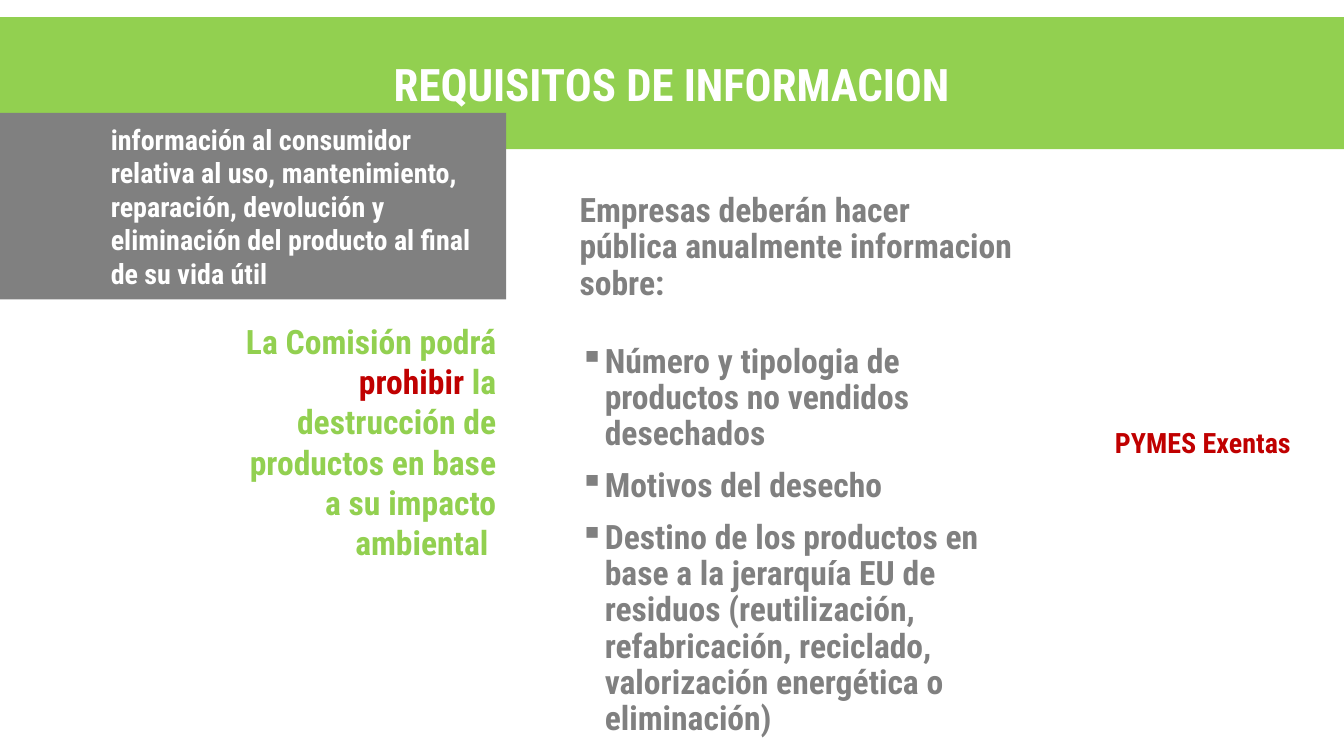
from lxml.etree import SubElement
from pptx import Presentation
from pptx.dml.color import RGBColor
from pptx.enum.text import MSO_ANCHOR, MSO_AUTO_SIZE, PP_ALIGN
from pptx.oxml.ns import qn
from pptx.util import Inches, Pt

COLORS = {"green": "92D050", "grey": "808080", "red": "C00000", "white": "FFFFFF"}
FONT = "Roboto Condensed"
WIDTH, HEIGHT = 13.33, 7.5
LEFT_COLUMN = 5.02  # right edge shared by the consumer panel and the ban text


def fill_paragraph(paragraph, pieces, size, align=PP_ALIGN.LEFT, indent=0, bullet=None):
    """Write (text, color) pieces in bold; indent is in inches."""
    paragraph.alignment = align
    paragraph.font.name = FONT
    paragraph.font.size = Pt(size)
    paragraph.font.bold = True
    for text, color in pieces:
        run = paragraph.add_run()
        run.text = text
        run.font.color.rgb = RGBColor.from_string(COLORS[color])
    properties = paragraph._p.get_or_add_pPr()
    hanging = 0.25 if bullet else 0
    properties.set("marL", str(Inches(indent + hanging)))
    properties.set("indent", str(Inches(-hanging)))
    if bullet:
        mark = SubElement(properties, qn("a:buChar"))
        mark.set("char", bullet)
        properties.append(properties.find(qn("a:defRPr")))  # must follow the bullet


def place(box, left, top, width, height, fill=None, anchor=MSO_ANCHOR.TOP):
    """Set position, fill and wrapping; return the first paragraph."""
    box.left, box.top = Inches(left), Inches(top)
    box.width, box.height = Inches(width), Inches(height)
    if fill:
        box.fill.solid()
        box.fill.fore_color.rgb = RGBColor.from_string(COLORS[fill])
    frame = box.text_frame
    frame.word_wrap = True
    frame.auto_size = MSO_AUTO_SIZE.NONE
    frame.vertical_anchor = anchor
    return frame.paragraphs[0]


presentation = Presentation()
presentation.slide_width, presentation.slide_height = Inches(WIDTH), Inches(HEIGHT)
slide = presentation.slides.add_slide(presentation.slide_layouts[5])

# Title band
heading = place(slide.shapes.title, 0, 0.17, WIDTH, 1.31, "green", MSO_ANCHOR.MIDDLE)
fill_paragraph(heading, [("REQUISITOS DE INFORMACION", "white")], 32, PP_ALIGN.CENTER)

# Annual disclosure duties
duties = slide.shapes.add_textbox(0, 0, 0, 0)
intro = place(duties, 5.15, 1.87, LEFT_COLUMN, 5.28)
fill_paragraph(
    intro,
    [("Empresas deberán hacer pública anualmente informacion sobre:", "grey")],
    24,
    indent=0.5,
)
intro.line_spacing = 0.9
disclosures = [
    "Número y tipologia de productos no vendidos desechados",
    "Motivos del desecho",
    "Destino de los productos en base a la jerarquía EU de residuos (reutilización, "
    "refabricación, reciclado, valorización energética o eliminación)",
]
for number, disclosure in enumerate(disclosures):
    item = duties.text_frame.add_paragraph()
    item.line_spacing = 0.9
    item.space_before = Pt(11 if number else 30)
    fill_paragraph(item, [(disclosure, "grey")], 24, indent=0.5, bullet="▪")

# Power to ban destruction
ban = place(slide.shapes.add_textbox(0, 0, 0, 0), LEFT_COLUMN - 2.74, 3.13, 2.74, 2.52)
fill_paragraph(
    ban,
    [
        ("La Comisión podrá ", "green"),
        ("prohibir", "red"),
        (" la destrucción de productos en base a su impacto ambiental ", "green"),
    ],
    24,
    PP_ALIGN.RIGHT,
)

# Exemption for small firms
exemption = place(slide.shapes.add_textbox(0, 0, 0, 0), 10.96, 4.17, 2.12, 0.44, "white")
fill_paragraph(exemption, [("PYMES Exentas", "red")], 20)

# Consumer information panel
consumer = place(
    slide.shapes.add_textbox(0, 0, 0, 0), 0, 1.12, LEFT_COLUMN, 1.85, "grey", MSO_ANCHOR.MIDDLE
)
fill_paragraph(
    consumer,
    [
        (
            "información al consumidor relativa al uso, mantenimiento, reparación, "
            "devolución y eliminación del producto al final de su vida útil",
            "white",
        )
    ],
    20,
    indent=1,
)

presentation.save("out.pptx")
